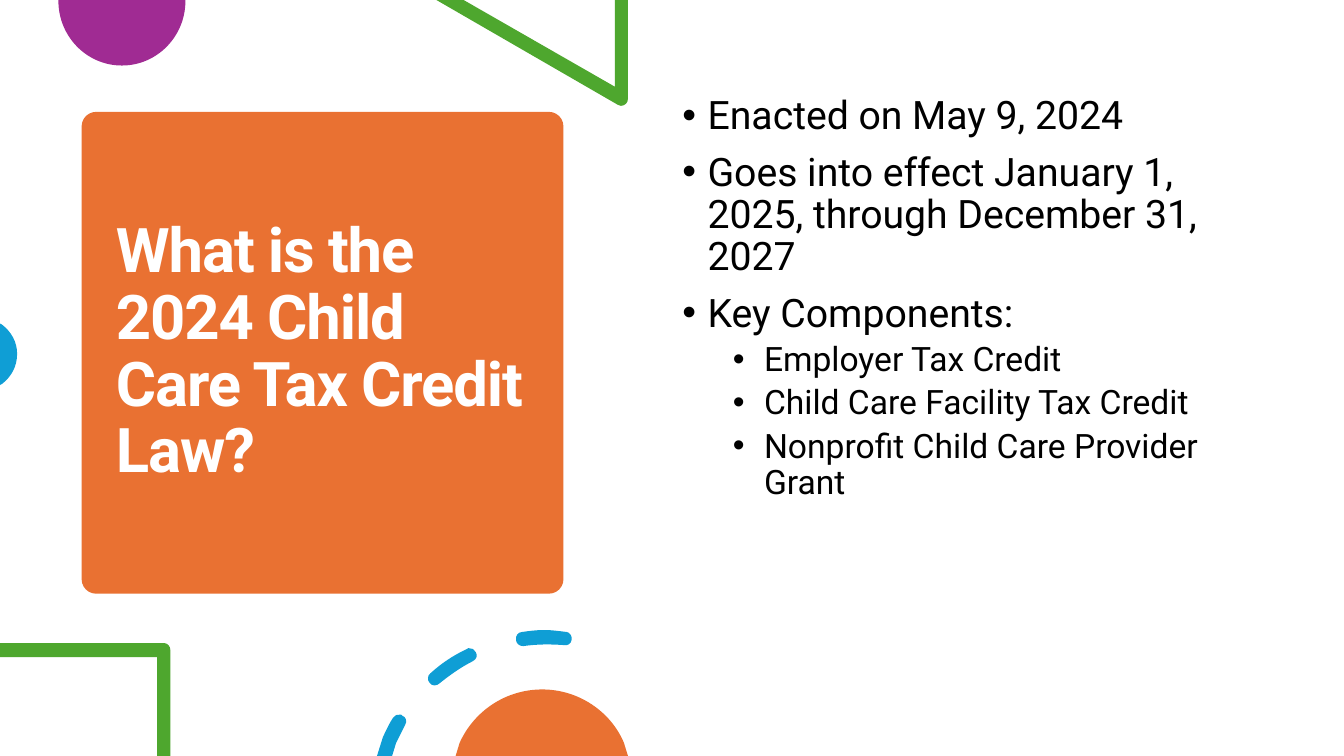
from pptx import Presentation
from pptx.dml.color import RGBColor
from pptx.enum.shapes import MSO_SHAPE
from pptx.enum.text import MSO_ANCHOR, MSO_AUTO_SIZE, PP_ALIGN
from pptx.oxml.ns import qn
from pptx.util import Pt
from lxml import etree

PX = 9144  # EMU per px, 100 px to the inch
ROUNDED = MSO_SHAPE.ROUNDED_RECTANGLE
LEFT, TOP, MIDDLE = PP_ALIGN.LEFT, MSO_ANCHOR.TOP, MSO_ANCHOR.MIDDLE
NO_AUTOFIT = MSO_AUTO_SIZE.NONE

THEME = {
    "font": "Roboto",
    "orange": RGBColor(0xE9, 0x71, 0x32),
    "purple": RGBColor(0xA0, 0x2B, 0x93),
    "green": RGBColor(0x4E, 0xA7, 0x2E),
    "blue": RGBColor(0x0F, 0x9E, 0xD5),
    "white": RGBColor(0xFF, 0xFF, 0xFF),
    "black": RGBColor(0, 0, 0),
    "title": Pt(44),
    "levels": [Pt(28), Pt(24)],
}

# Each outline is a list of contours; two numbers are a corner,
# six are a Bezier curve from the previous point.
OUTLINES = [
    ("purple", [[(184, 0), (58, 0), (58, 1), (58, 36, 86, 65, 121, 65),
                 (156, 65, 184, 36, 184, 1)]]),
    ("green", [[(623, 0), (610, 0), (610, 86), (460, 0), (433, 0), (613, 104),
                (614, 105, 615, 105, 616, 105), (620, 105, 623, 102, 623, 98)]]),
    ("blue", [[(0, 321), (0, 382), (2, 381), (11, 374, 17, 364, 17, 351),
               (17, 339, 11, 329, 2, 322)]]),
    ("green", [[(163, 638), (0, 638), (0, 652), (156, 652), (156, 750),
                (169, 750), (169, 645), (169, 641, 166, 638, 163, 638)]]),
    ("blue", [
        [(397, 709), (394, 708, 392, 710, 390, 712), (386, 718, 383, 725, 380, 731),
         (374, 750), (389, 750), (393, 737), (396, 731, 399, 725, 402, 719),
         (404, 716, 403, 711, 399, 710), (399, 709, 398, 709, 397, 709)],
        [(465, 643), (465, 643, 464, 643, 463, 644), (450, 650, 438, 658, 427, 668),
         (424, 670, 424, 675, 426, 677), (427, 679, 429, 680, 431, 680),
         (433, 680, 435, 679, 436, 678), (446, 670, 457, 662, 469, 656),
         (473, 654, 474, 650, 472, 647), (471, 644, 468, 643, 465, 643)],
        [(540, 625), (532, 625, 525, 626, 518, 627), (514, 627, 511, 631, 512, 635),
         (512, 638, 515, 641, 519, 641), (533, 639, 546, 639, 560, 640),
         (563, 641, 567, 638, 567, 635), (568, 631, 565, 627, 562, 627),
         (554, 626, 547, 625, 540, 625)],
    ]),
    ("orange", [[(538, 684), (501, 684, 470, 706, 456, 737), (452, 750),
                 (623, 750), (619, 737), (606, 706, 574, 684, 538, 684)]]),
]

TITLE = "What is the 2024 Child Care Tax Credit Law?"
# Text, level, space before, space after
BULLETS = [
    ("Enacted on May 9, 2024", 0, 12, 0),
    ("Goes into effect January 1, 2025, through December 31, 2027", 0, 10, 0),
    ("Key Components:", 0, 10, 0),
    ("Employer Tax Credit", 1, 5, 0),
    ("Child Care Facility Tax Credit", 1, 5, 0),
    ("Nonprofit Child Care Provider Grant", 1, 5, 12),
]
INDENTS = [(25, -25), (81, -31)]  # left margin and first line, by level


def apply_format(target, values):
    for name, value in values.items():
        setattr(target, name, value)


def bend_lines(sp, contours):
    """Merge the three lines that stand for each Bezier curve into one curve."""
    lines = iter(list(sp._element.iter(qn("a:lnTo"))))
    for contour in contours:
        for segment in contour[1:]:
            legs = [next(lines) for _ in range(len(segment) // 2)]
            if len(legs) == 1:
                continue
            curve = legs[0].makeelement(qn("a:cubicBezTo"))
            legs[0].addprevious(curve)
            for leg in legs:
                curve.append(leg[0])
                leg.getparent().remove(leg)


prs = Presentation()
prs.slide_width, prs.slide_height = 750 * PX * 16 // 9, 750 * PX
s = prs.slides.add_slide(prs.slide_layouts[1])
title, body = s.shapes.title, s.placeholders[1]

# Title card, placed behind the title
card = s.shapes.add_shape(ROUNDED, 81 * PX, 111 * PX, 478 * PX, 478 * PX)
card.adjustments[0] = 0.03
card.shadow.inherit = False
card.fill.solid()
card.fill.fore_color.rgb = THEME["orange"]
card.line.fill.background()
title._element.addprevious(card._element)

# Decorations along the slide edges
for colour, contours in OUTLINES:
    builder = s.shapes.build_freeform(*contours[0][0], scale=PX)
    for i, (start, *segments) in enumerate(contours):
        if i:
            builder.move_to(*start)
        builder.add_line_segments([segment[k:k + 2] for segment in segments
                                   for k in range(0, len(segment), 2)], close=True)
    sp = builder.convert_to_shape()
    bend_lines(sp, contours)
    sp.shadow.inherit = False
    sp.fill.solid()
    sp.fill.fore_color.rgb = THEME[colour]
    sp.line.fill.background()

# Placeholders
for sp, box, anchor in ((title, (105, 122, 431, 456), MIDDLE),
                        (body, (667, 90, 575, 535), TOP)):
    left, top, width, height = (n * PX for n in box)
    apply_format(sp, {"left": left, "top": top, "width": width, "height": height})
    apply_format(sp.text_frame, {"word_wrap": True, "auto_size": NO_AUTOFIT,
                                 "vertical_anchor": anchor})

p = title.text_frame.paragraphs[0]
apply_format(p, {"alignment": LEFT, "line_spacing": 0.9})
r = p.add_run()
r.text = TITLE
apply_format(r.font, {"name": THEME["font"], "size": THEME["title"], "bold": True})
r.font.color.rgb = THEME["white"]
r.font._element.set("spc", "-80")

# Bulleted list
tf = body.text_frame
for i, (text, level, before, after) in enumerate(BULLETS):
    p = tf.add_paragraph() if i else tf.paragraphs[0]
    apply_format(p, {"level": level, "alignment": LEFT, "line_spacing": 0.9,
                     "space_before": Pt(before), "space_after": Pt(after)})
    pPr = p._p.get_or_add_pPr()
    for name, length in zip(("marL", "indent"), INDENTS[level]):
        pPr.set(name, str(length * PX))
    etree.SubElement(pPr, qn("a:buFont")).set("typeface", "Arial")
    etree.SubElement(pPr, qn("a:buChar")).set("char", "•")
    r = p.add_run()
    r.text = text
    apply_format(r.font, {"name": THEME["font"], "size": THEME["levels"][level]})
    r.font.color.rgb = THEME["black"]

prs.save("out.pptx")
